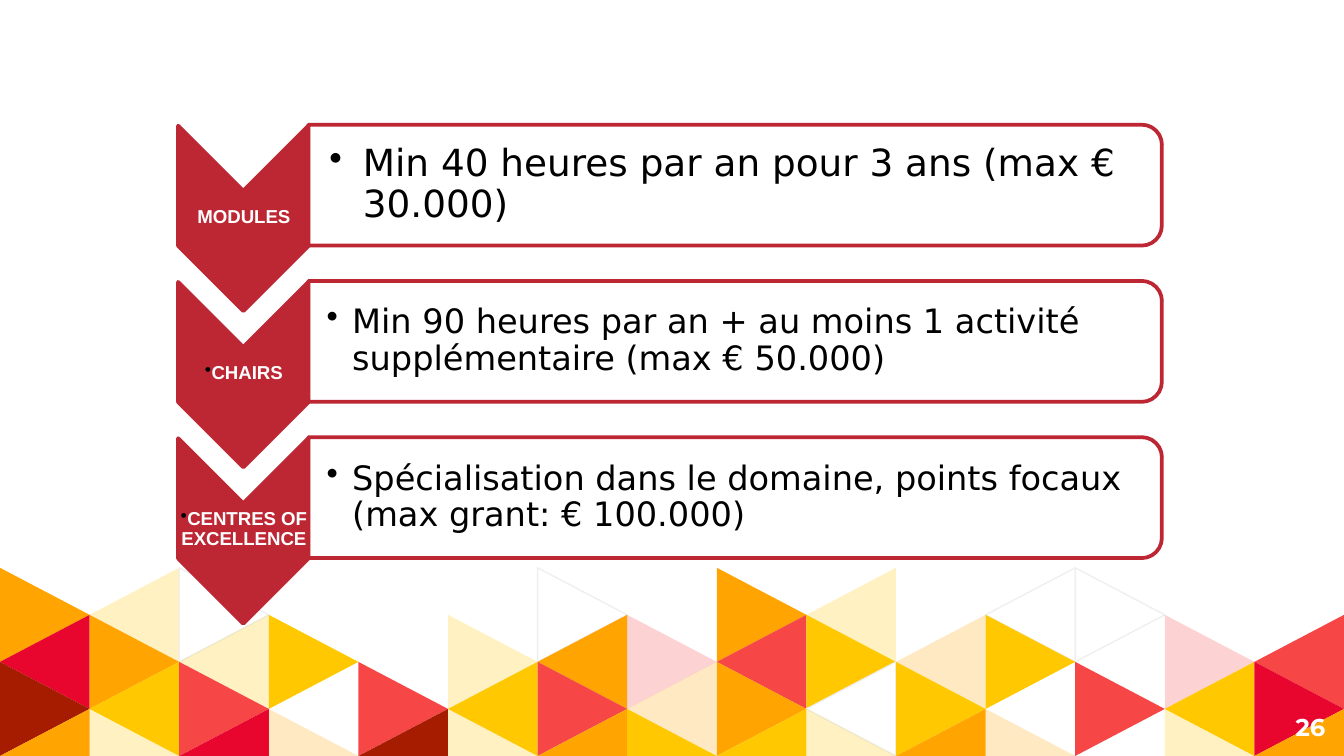
from dataclasses import dataclass
from typing import NamedTuple

from lxml import etree
from pptx import Presentation
from pptx.dml.color import RGBColor
from pptx.enum.shapes import MSO_SHAPE
from pptx.enum.text import MSO_ANCHOR, PP_ALIGN
from pptx.oxml.ns import qn
from pptx.util import Inches, Pt

CHEVRON, ROUND_TOP = MSO_SHAPE.CHEVRON, MSO_SHAPE.ROUND_2_SAME_RECTANGLE
MIDDLE = MSO_ANCHOR.MIDDLE
LEFT, CENTER, RIGHT = PP_ALIGN.LEFT, PP_ALIGN.CENTER, PP_ALIGN.RIGHT

WIDTH, HEIGHT = Inches(10), Inches(5.625)
COLUMNS, LEVELS = 15, 4
COLUMN_W, LEVEL_H = WIDTH / COLUMNS, Inches(0.35)
MOSAIC_TOP = HEIGHT - LEVELS * LEVEL_H
RED, WHITE, BLACK, GREY = "BD2733", "FFFFFF", "000000", "EFEFEF"
ROW_PITCH = 20.67  # per cent of the slide height


class Area(NamedTuple):
    """Left, top, width and height in per cent of the slide."""
    x: float
    y: float
    w: float
    h: float

    def down(self, rows: int) -> "Area":
        return self._replace(y=self.y + rows * ROW_PITCH)

    def emu(self) -> list[int]:
        sides = (WIDTH, HEIGHT, WIDTH, HEIGHT)
        return [round(share * side / 100) for share, side in zip(self, sides)]


@dataclass
class Paint:
    color: str
    alpha: int = 100
    line: str | None = None
    line_w: float = 0.75


@dataclass
class TextStyle:
    size: float
    font: str
    color: str
    bold: bool = False
    align: PP_ALIGN = LEFT
    spacing: float = 0.9
    insets: tuple = (0.01, 0.01, 0.01, 0.01)
    hang: float = 0
    bullet: bool = False


@dataclass
class Action:
    label: str
    detail: str
    label_bullet: bool = True
    size: float = 18
    inset: float = 0.14
    hang: float = 0.19


CHEVRON_AREA = Area(11.2, 20.27, 13.8, 17.24)
LABEL_AREA = Area(13.3, 25.07, 9.7, 7.29)
BAR_AREA = Area(50.2, -31.95, 9, 112.89)
DETAIL_AREA = Area(22.9, 17.24, 63.1, 14.4)
NUMBER_AREA = Area(93.6, 92.27, 6, 7.64)

ACTIONS = [
    Action("MODULES", "Min 40 heures par an pour 3 ans (max € 30.000)",
           False, 20, 0.16, 0.25),
    Action("CHAIRS", "Min 90 heures par an + au moins 1 activité "
           "supplémentaire (max € 50.000)"),
    Action("CENTRES OF EXCELLENCE", "Spécialisation dans le domaine, "
           "points focaux (max grant: € 100.000)"),
]

PAINTS = {
    "O": Paint("FFA400"), "o": Paint("FFA400", 24),
    "Y": Paint("FFC800"), "y": Paint("FFC800", 24),
    "R": Paint("F64646"), "r": Paint("F64646", 24),
    "C": Paint("E8062F"), "B": Paint("A61C00"),
    "W": Paint(WHITE, line=GREY),
}
# One letter per column, one string per level; a dot leaves a gap
MOSAIC = ["OyW...W.Oy.WW..",
          "COyY.yOrRYoY.rR",
          "BYR.RYRoOWY.RYC",
          "OyCoByOYYyOo.yO"]


def rgb(color: str) -> RGBColor:
    return RGBColor.from_string(color)


def paint_shape(s, paint: Paint) -> None:
    s.shadow.inherit = False
    s.fill.solid()
    s.fill.fore_color.rgb = rgb(paint.color)
    if paint.alpha < 100:
        clr = s._element.spPr.find(qn("a:solidFill"))[0]
        etree.SubElement(clr, qn("a:alpha"), val=str(paint.alpha * 1000))
    if paint.line:
        s.line.color.rgb = rgb(paint.line)
        s.line.width = Pt(paint.line_w)
    else:
        s.line.fill.background()


def add_triangle(shapes, col: int, level: int, paint: Paint) -> None:
    """Point right on even cells and left on odd ones, cut at the slide's foot."""
    base, tip = (col, col + 1) if (col + level) % 2 == 0 else (col + 1, col)
    cells = [(base, level), (tip, level + 1), (base, min(level + 2, LEVELS))]
    points = [(round(c * COLUMN_W), round(MOSAIC_TOP + r * LEVEL_H))
              for c, r in cells]
    builder = shapes.build_freeform(*points[0])
    builder.add_line_segments(points[1:], close=True)
    paint_shape(builder.convert_to_shape(), paint)


def add_turned(shapes, kind, area: Area, adjust: list, paint: Paint) -> None:
    s = shapes.add_shape(kind, *area.emu())
    s.rotation = 90
    for i, value in enumerate(adjust):
        s.adjustments[i] = value
    paint_shape(s, paint)


def add_text(shapes, area: Area, text: str, style: TextStyle) -> None:
    tf = shapes.add_textbox(*area.emu()).text_frame
    left, top, right, bottom = map(Inches, style.insets)
    frame = {"word_wrap": True, "vertical_anchor": MIDDLE,
             "margin_left": left, "margin_top": top,
             "margin_right": right, "margin_bottom": bottom}
    for name, value in frame.items():
        setattr(tf, name, value)
    p = tf.paragraphs[0]
    p.alignment, p.line_spacing = style.align, style.spacing
    r = p.add_run()
    r.text = text
    formats = {"size": Pt(style.size), "name": style.font, "bold": style.bold}
    for name, value in formats.items():
        setattr(r.font, name, value)
    r.font.color.rgb = rgb(style.color)
    if style.bullet:
        pPr = p._p.get_or_add_pPr()
        pPr.set("marL", str(Inches(style.hang)))
        pPr.set("indent", str(-Inches(style.hang)))
        clr = etree.SubElement(pPr, qn("a:buClr"))
        etree.SubElement(clr, qn("a:srgbClr"), val=BLACK)
        etree.SubElement(pPr, qn("a:buChar"), char="•")


def add_action(shapes, row: int, action: Action) -> None:
    add_turned(shapes, CHEVRON, CHEVRON_AREA.down(row), [0.5],
               Paint(RED, line=RED, line_w=2))
    add_text(shapes, LABEL_AREA.down(row), action.label,
             TextStyle(10, "Arial", WHITE, True, CENTER,
                       bullet=action.label_bullet))
    add_turned(shapes, ROUND_TOP, BAR_AREA.down(row), [0.167, 0],
               Paint(WHITE, 89, RED, 2))
    add_text(shapes, DETAIL_AREA.down(row), action.detail,
             TextStyle(action.size, "DejaVu Sans", BLACK,
                       insets=(action.inset, 0.01, 0.01, 0.01),
                       hang=action.hang, bullet=True))


def main() -> None:
    prs = Presentation()
    prs.slide_width, prs.slide_height = WIDTH, HEIGHT
    shapes = prs.slides.add_slide(prs.slide_layouts[6]).shapes
    for level, letters in enumerate(MOSAIC):
        for col, letter in enumerate(letters):
            if letter in PAINTS:
                add_triangle(shapes, col, level, PAINTS[letter])
    add_text(shapes, NUMBER_AREA, "26",
             TextStyle(13, "Montserrat", WHITE, True, RIGHT, 1.0, (0.1,) * 4))
    for row, action in enumerate(ACTIONS):
        add_action(shapes, row, action)
    prs.save("out.pptx")


if __name__ == "__main__":
    main()
